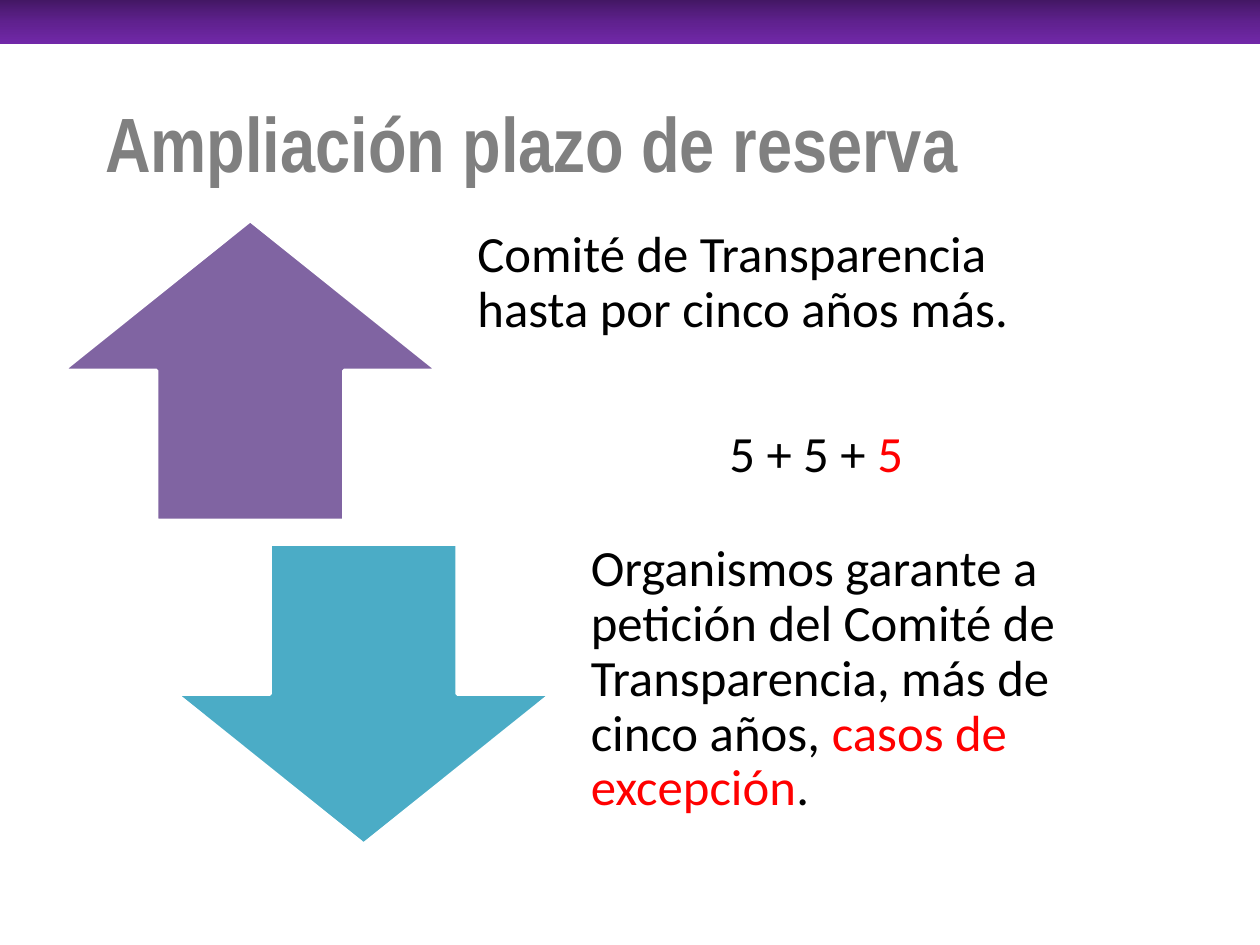
from copy import deepcopy

from pptx import Presentation
from pptx.dml.color import RGBColor
from pptx.enum.shapes import MSO_SHAPE
from pptx.enum.text import MSO_ANCHOR, PP_ALIGN
from pptx.oxml.ns import qn
from pptx.util import Pt

# Content: runs are (text, colour name)
TITLE = "Ampliación plazo de reserva"
STEPS = [
    {"arrow": MSO_SHAPE.UP_ARROW, "colour": "purple", "paragraphs": [
        {"runs": [("Comité de Transparencia hasta por cinco años más.", "text")]},
        {"runs": [("5 + 5 + ", "text"), ("5", "accent")],
         "indent": 144, "before": 51.5},
    ]},
    {"arrow": MSO_SHAPE.DOWN_ARROW, "colour": "teal", "paragraphs": [
        {"runs": [("Organismos garante a petición del Comité de Transparencia, "
                   "más de cinco años, ", "text"),
                  ("casos de excepción", "accent"), (".", "text")]},
    ]},
]

THEME = {
    "title_font": "Arial Narrow", "title_size": 44,
    "body_font": "Calibri", "body_size": 29,
    "title": "808080", "text": "000000", "accent": "FF0000",
    "purple": "8064A2", "teal": "4BACC6", "outline": "FFFFFF",
    "band": [(0, "431764"), (0.5, "5F218E"), (1, "7128A8")],
}

# Layout in points
SLIDE_W, SLIDE_H = 720, 540
BAND_W, BAND_H = 723, 25
TITLE_BOX = (-20, 36, 648, 90)
LEFT, TOP = 36, 126
ARROW_W, STEP_H = 214, 171.4
TEXT_OFFSET, TEXT_W = 220.3, 363
STEP_DX, STEP_DY = 64.8, 185
INSET = 16.5


def colour(name):
    return RGBColor.from_string(THEME[name])


def box(*lengths):
    return [Pt(length) for length in lengths]


def add_run(paragraph, text, font, size, colour_name):
    run = paragraph.add_run()
    run.text = text
    run.font.name = font
    run.font.size = Pt(size)
    run.font.color.rgb = colour(colour_name)
    return run


def add_band(slide):
    band = slide.shapes.add_shape(MSO_SHAPE.RECTANGLE, *box(0, 0, BAND_W, BAND_H))
    band.shadow.inherit = False
    band.line.fill.background()
    band.fill.gradient()
    band.fill.gradient_angle = 270
    stop_list = band.fill._xPr.find(".//" + qn("a:gsLst"))
    stop_list.append(deepcopy(stop_list[0]))
    for stop, (position, rgb) in zip(band.fill.gradient_stops, THEME["band"]):
        stop.position = position
        stop.color.rgb = RGBColor.from_string(rgb)


def add_title(slide):
    title = slide.shapes.title
    title.left, title.top, title.width, title.height = box(*TITLE_BOX)
    title.text_frame.vertical_anchor = MSO_ANCHOR.MIDDLE
    heading = title.text_frame.paragraphs[0]
    heading.alignment = PP_ALIGN.CENTER
    run = add_run(heading, TITLE, THEME["title_font"], THEME["title_size"], "title")
    run.font.bold = True


def add_step(slide, index, step):
    left, top = LEFT + index * STEP_DX, TOP + index * STEP_DY

    # Arrow
    arrow = slide.shapes.add_shape(step["arrow"], *box(left, top, ARROW_W, STEP_H))
    arrow.shadow.inherit = False
    arrow.fill.solid()
    arrow.fill.fore_color.rgb = colour(step["colour"])
    arrow.line.color.rgb = colour("outline")
    arrow.line.width = Pt(2)

    # Explanation beside the arrow
    explanation = slide.shapes.add_textbox(
        *box(left + TEXT_OFFSET, top, TEXT_W, STEP_H))
    frame = explanation.text_frame
    frame.word_wrap = True
    frame.vertical_anchor = MSO_ANCHOR.MIDDLE
    frame.margin_left = frame.margin_right = frame.margin_bottom = Pt(INSET)
    frame.margin_top = 0
    for number, content in enumerate(step["paragraphs"]):
        paragraph = frame.add_paragraph() if number else frame.paragraphs[0]
        paragraph.line_spacing = 0.9
        if "before" in content:
            paragraph.space_before = Pt(content["before"])
        if "indent" in content:
            paragraph._p.get_or_add_pPr().set("marL", str(Pt(content["indent"])))
        for text, colour_name in content["runs"]:
            add_run(paragraph, text, THEME["body_font"], THEME["body_size"],
                    colour_name)


def main():
    deck = Presentation()
    deck.slide_width, deck.slide_height = box(SLIDE_W, SLIDE_H)
    slide = deck.slides.add_slide(deck.slide_layouts[5])
    add_band(slide)
    add_title(slide)
    for index, step in enumerate(STEPS):
        add_step(slide, index, step)
    deck.save("out.pptx")


if __name__ == "__main__":
    main()
